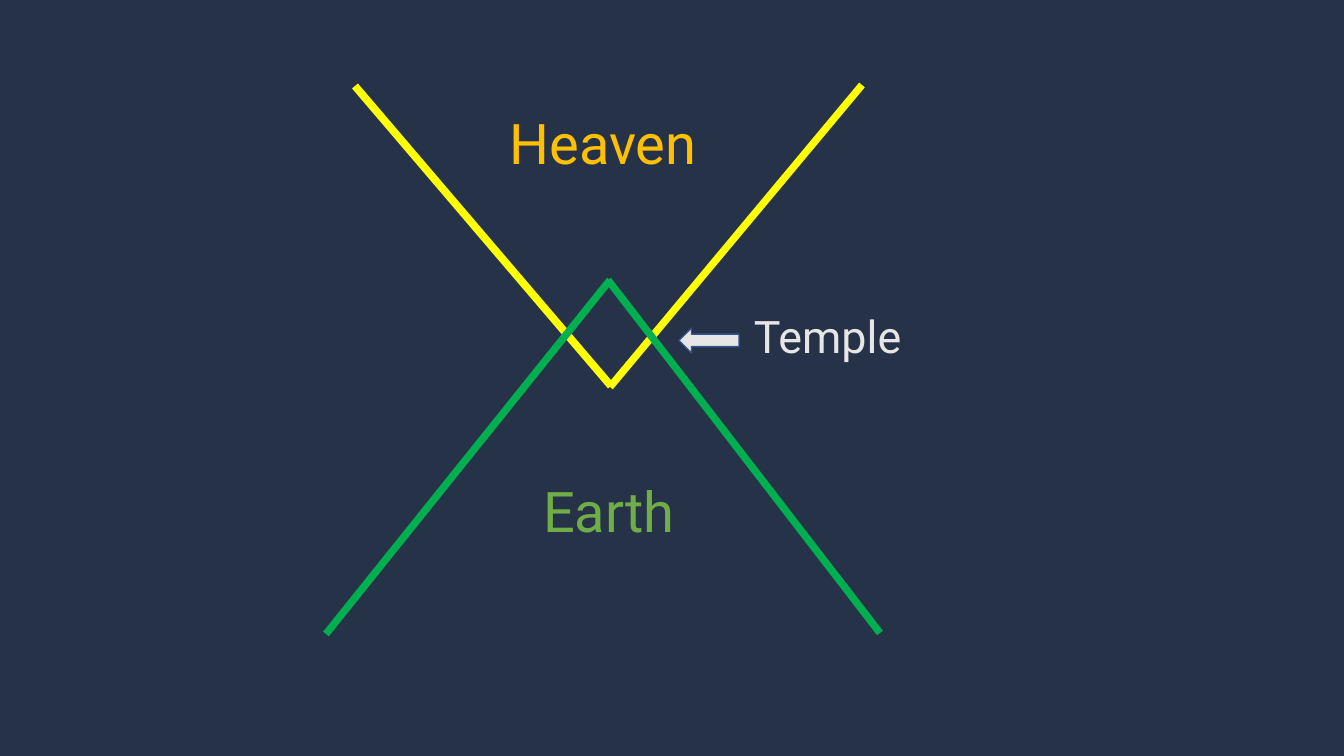
import pptx
import pptx.dml.color
import pptx.enum.shapes
import pptx.enum.text
import pptx.oxml.ns
import pptx.util
from lxml import etree

EMU_PER_PX = 914400 / 100.8
SLIDE_SIZE = (1344, 756)
BACKGROUND = "263248"
FONT = "Roboto"
LEFT = pptx.enum.text.PP_ALIGN.LEFT
CENTER = pptx.enum.text.PP_ALIGN.CENTER

# Content: rays as start, end, colour, width in points
RAYS = [
    ((355, 86), (611, 386), "FFFF00", 5.5),
    ((862, 85), (610, 387), "FFFF00", 5.25),
    ((610, 280), (326, 634), "00B050", 5.25),
    ((608, 280), (880, 633), "00B050", 5.25),
]
# Labels as wording, box, size in points, colour, alignment
LABELS = [
    ("Heaven", (477, 104, 252, 78), 40, "FFC000", CENTER),
    ("Earth", (483, 472, 252, 78), 40, "70AD47", CENTER),
    ("Temple", (744, 304, 295, 65), 32, "E7E6E6", LEFT),
]
TEMPLE_ARROW = ((679, 328, 60, 25), "E7E6E6", "325491", 1)


def px(*lengths):
    return [pptx.util.Emu(round(length * EMU_PER_PX)) for length in lengths]


def color(hex_code):
    return pptx.dml.color.RGBColor.from_string(hex_code)


def fill_solid(fill, hex_code):
    fill.solid()
    fill.fore_color.rgb = color(hex_code)


def set_line(line, hex_code, points):
    fill_solid(line.fill, hex_code)
    line.width = pptx.util.Pt(points)


def add_ray(slide, start, end, hex_code, points):
    ray = slide.shapes.add_connector(
        pptx.enum.shapes.MSO_CONNECTOR.STRAIGHT, *px(*start, *end))
    set_line(ray.line, hex_code, points)
    etree.SubElement(ray._element.spPr, pptx.oxml.ns.qn("a:effectLst"))


def add_label(slide, wording, box, size, hex_code, alignment):
    frame = slide.shapes.add_textbox(*px(*box)).text_frame
    frame.word_wrap = True
    frame.auto_size = pptx.enum.text.MSO_AUTO_SIZE.SHAPE_TO_FIT_TEXT
    paragraph = frame.paragraphs[0]
    paragraph.alignment = alignment
    run = paragraph.add_run()
    run.text = wording
    run.font.name = FONT
    run.font.size = pptx.util.Pt(size)
    run.font.color.rgb = color(hex_code)


def add_arrow(slide, box, fill_color, line_color, points):
    arrow = slide.shapes.add_shape(
        pptx.enum.shapes.MSO_SHAPE.LEFT_ARROW, *px(*box))
    arrow.shadow.inherit = False
    fill_solid(arrow.fill, fill_color)
    set_line(arrow.line, line_color, points)


def main():
    deck = pptx.Presentation()
    deck.slide_width, deck.slide_height = px(*SLIDE_SIZE)
    slide = deck.slides.add_slide(deck.slide_layouts.get_by_name("Blank"))
    fill_solid(slide.background.fill, BACKGROUND)

    # Crossing rays of heaven and earth
    for ray in RAYS:
        add_ray(slide, *ray)

    # Realm names and the pointer to their overlap
    for label in LABELS:
        add_label(slide, *label)
    add_arrow(slide, *TEMPLE_ARROW)

    deck.save("out.pptx")


if __name__ == "__main__":
    main()
